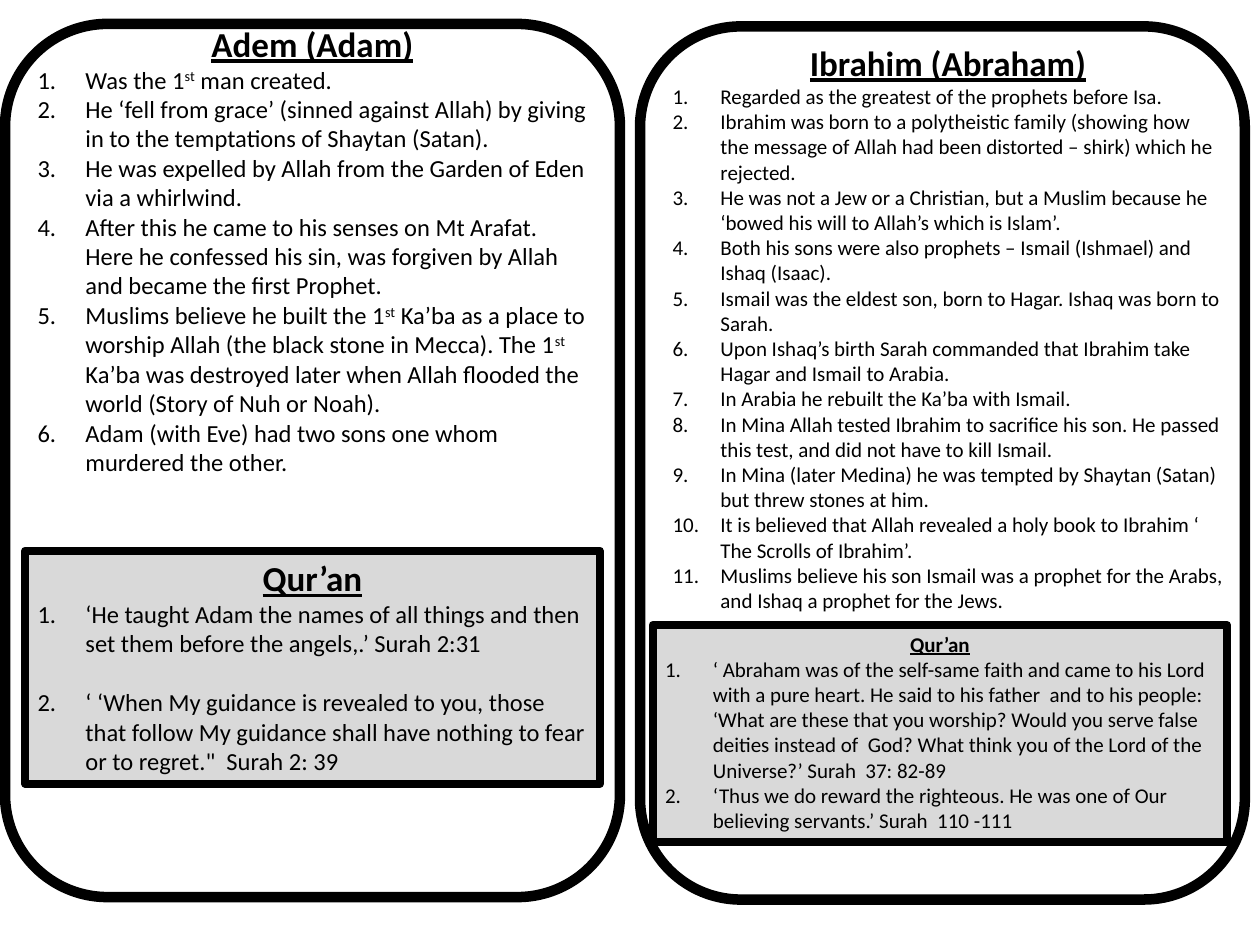
from dataclasses import dataclass

from lxml.etree import SubElement
from pptx import Presentation
from pptx.dml.color import RGBColor
from pptx.enum.shapes import MSO_SHAPE as Kind
from pptx.enum.text import MSO_ANCHOR as Anchor, PP_ALIGN as Align
from pptx.oxml.ns import qn
from pptx.util import Inches, Pt

INK, PAPER, GREY = "000000", "FFFFFF", "D9D9D9"


@dataclass
class Box:
    left: float
    top: float
    width: float
    height: float


@dataclass
class Text:
    box: Box
    title: str
    items: list[str]
    head: int
    size: int
    gap: int = 0


@dataclass
class Card:
    frame: Box
    facts: Text
    verse: Text


CARDS = [
    Card(
        Box(0.04, 0.19, 4.88, 6.93),
        Text(Box(0.2, 0.13, 4.56, 3.97), "Adem (Adam)", [
            "Was the 1^st^ man created.",
            "He ‘fell from grace’ (sinned against Allah) by giving in to the temptations of Shaytan (Satan).",
            "He was expelled by Allah from the Garden of Eden via a whirlwind.",
            "After this he came to his senses on Mt Arafat. Here he confessed his sin, "
            "was forgiven by Allah and became the first Prophet.",
            "Muslims believe he built the 1^st^ Ka’ba as a place to worship Allah "
            "(the black stone in Mecca). The 1^st^ Ka’ba was destroyed later when "
            "Allah flooded the world (Story of Nuh or Noah).",
            "Adam (with Eve) had two sons one whom murdered the other.",
        ], 20, 14),
        Text(Box(0.2, 4.37, 4.56, 1.85), "Qur’an", [
            "‘He taught Adam the names of all things and then set them before the angels,.’ Surah 2:31",
            "‘ ‘When My guidance is revealed to you, those that follow My guidance "
            "shall have nothing to fear or to regret.\"  Surah 2: 39",
        ], 20, 14, gap=17),
    ),
    Card(
        Box(5.08, 0.21, 4.8, 6.93),
        Text(Box(5.24, 0.28, 4.57, 5.28), "Ibrahim (Abraham)", [
            "Regarded as the greatest of the prophets before Isa.",
            "Ibrahim was born to a polytheistic family (showing how the message of "
            "Allah had been distorted – shirk) which he rejected.",
            "He was not a Jew or a Christian, but a Muslim because he "
            "‘bowed his will to Allah’s which is Islam’.",
            "Both his sons were also prophets – Ismail (Ishmael) and Ishaq (Isaac).",
            "Ismail was the eldest son, born to Hagar. Ishaq was born to Sarah.",
            "Upon Ishaq’s birth Sarah commanded that Ibrahim take Hagar and Ismail to Arabia.",
            "In Arabia he rebuilt the Ka’ba with Ismail.",
            "In Mina Allah tested Ibrahim to sacrifice his son. He passed this test, "
            "and did not have to kill Ismail.",
            "In Mina (later Medina) he was tempted by Shaytan (Satan) but threw stones at him.",
            "It is believed that Allah revealed a holy book to Ibrahim ‘ The Scrolls of Ibrahim’.",
            "Muslims believe his son Ismail was a prophet for the Arabs, and Ishaq a prophet for the Jews.",
        ], 20, 12),
        Text(Box(5.18, 4.96, 4.56, 1.72), "Qur’an", [
            "‘ Abraham was of the self-same faith and came to his Lord with a pure heart. "
            "He said to his father  and to his people: ‘What are these that you worship? "
            "Would you serve false deities instead of  God? What think you of the Lord "
            "of the Universe?’ Surah  37: 82-89",
            "‘Thus we do reward the righteous. He was one of Our believing servants.’ Surah  110 -111",
        ], 12, 12),
    ),
]


def color(code: str) -> RGBColor:
    return RGBColor.from_string(code)


def place(box: Box) -> list[int]:
    return [Inches(n) for n in (box.left, box.top, box.width, box.height)]


def draw(slide, kind, box: Box, fill: str, weight: float):
    shape = slide.shapes.add_shape(kind, *place(box))
    shape.shadow.inherit = False
    shape.fill.solid()
    shape.fill.fore_color.rgb = color(fill)
    shape.line.color.rgb = color(INK)
    shape.line.width = Pt(weight)
    return shape


def write(para, text: str, *, size: int, bold: bool = False,
          align=Align.LEFT, number: bool = False, gap: int = 0) -> None:
    para.alignment = align
    para.space_after = Pt(gap)
    if number:
        props = para._p.get_or_add_pPr()
        props.set("marL", str(Inches(0.38)))
        props.set("indent", str(Inches(-0.38)))
        SubElement(props, qn("a:buFont"), typeface="+mj-lt")
        SubElement(props, qn("a:buAutoNum"), type="arabicPeriod")
    for i, part in enumerate(text.split("^")):
        run = para.add_run()
        run.text = part
        font = run.font
        font.name, font.size = "Calibri", Pt(size)
        font.bold = font.underline = bold
        font.color.rgb = color(INK)
        if i % 2:
            run._r.get_or_add_rPr().set("baseline", "30000")


def fill_text(shape, text: Text) -> None:
    frame = shape.text_frame
    frame.word_wrap = True
    frame.vertical_anchor = Anchor.TOP
    write(frame.paragraphs[0], text.title, size=text.head, bold=True, align=Align.CENTER)
    for item in text.items:
        gap = 0 if item is text.items[-1] else text.gap
        write(frame.add_paragraph(), item, size=text.size, number=True, gap=gap)


def main() -> None:
    deck = Presentation()
    deck.slide_width, deck.slide_height = Inches(10), Inches(7.5)
    slide = deck.slides.add_slide(deck.slide_layouts[6])
    for card in CARDS:
        draw(slide, Kind.ROUNDED_RECTANGLE, card.frame, PAPER, 6)
        fill_text(slide.shapes.add_textbox(*place(card.facts.box)), card.facts)
        fill_text(draw(slide, Kind.RECTANGLE, card.verse.box, GREY, 4.5), card.verse)
    deck.save("out.pptx")


if __name__ == "__main__":
    main()
